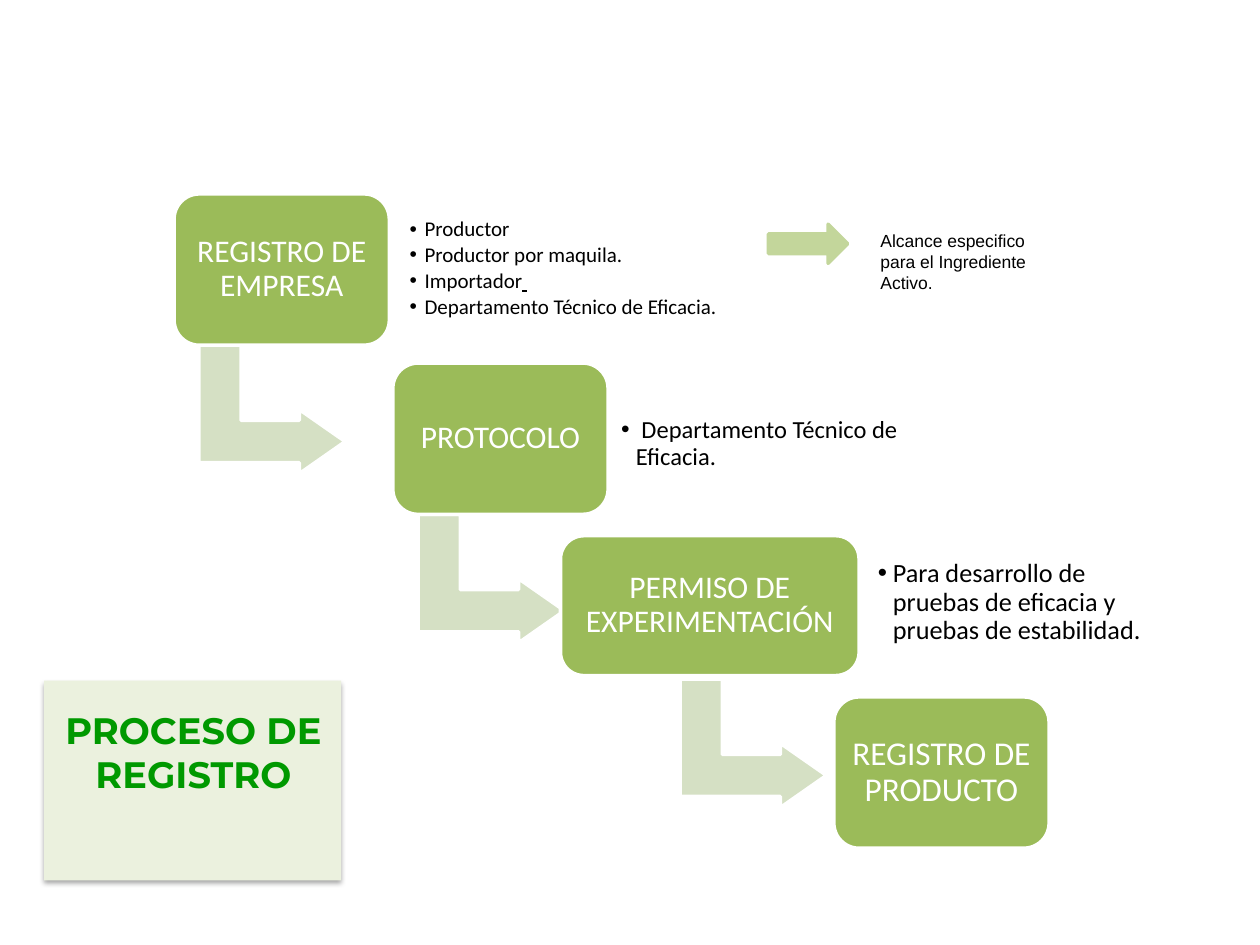
"""Build the slide on the registration process as a staircase of steps."""
import lxml.etree
import pptx
import pptx.dml.color
import pptx.enum.shapes
import pptx.enum.text
import pptx.oxml.ns
import pptx.util

Cm, Pt = pptx.util.Cm, pptx.util.Pt
KIND = pptx.enum.shapes.MSO_SHAPE
MID = pptx.enum.text.MSO_ANCHOR.MIDDLE
CENTER = pptx.enum.text.PP_ALIGN.CENTER

BENDS = [(4.19, 6.78), (8.61, 10.19), (13.89, 13.51)]
STEPS = [
    ("REGISTRO DE EMPRESA", (3.51, 3.91, 4.34, 3.05), 18, 0.18),
    ("PROTOCOLO", (7.92, 7.32, 4.34, 3.05), 18, 0.18),
    ("PERMISO DE EXPERIMENTACIÓN", (11.3, 10.8, 6.02, 2.82), 18, 0.18),
    ("REGISTRO DE PRODUCTO", (16.81, 14.05, 4.34, 3.05), 19, 0.2),
]
LISTS = [
    (["Productor", "Productor por maquila.", "Importador",
      "Departamento Técnico de Eficacia."], (8.13, 3.63, 6.63, 3.58), 12, 0.13),
    ([" Departamento Técnico de Eficacia."], (12.37, 8.36, 6.07, 1.19), 14, 0.15),
    (["Para desarrollo de pruebas de eficacia y pruebas de estabilidad."],
     (17.5, 10.92, 5.84, 2.46), 15, 0.2),
]


def tint(code):
    return pptx.dml.color.RGBColor.from_string(code)


def apply(item, **values):
    for name, value in values.items():
        setattr(item, name, value)


def add_node(parent, tag, **values):
    return lxml.etree.SubElement(parent, pptx.oxml.ns.qn(tag), values)


def place(box):
    return [Cm(side) for side in box]


def add_form(slide, kind, box, fill, edge=None):
    form = slide.shapes.add_shape(kind, *place(box))
    form.shadow.inherit = False
    form.fill.solid()
    form.fill.fore_color.rgb = tint(fill)
    if edge:
        form.line.color.rgb = tint(edge)
        form.line.width = Pt(2)
    else:
        form.line.fill.background()
    return form


def set_frame(frame, inset):
    apply(frame, word_wrap=True, vertical_anchor=MID,
          **{f"margin_{side}": Cm(inset) for side in ("left", "top", "right", "bottom")})


def set_font(line, color, **values):
    line.font.color.rgb = tint(color)
    apply(line.font, **values)


def add_bend(slide, spot):
    bend = add_form(slide, KIND.BENT_UP_ARROW, (*spot, 2.59, 2.95), "D5E0C4", "FFFFFF")
    bend.rotation = 90
    for index, value in enumerate((0.328, 0.25, 0.358)):
        bend.adjustments[index] = value


def add_step(slide, text, box, size, inset):
    step = add_form(slide, KIND.ROUNDED_RECTANGLE, box, "9BBB59", "FFFFFF")
    set_frame(step.text_frame, inset)
    line = step.text_frame.paragraphs[0]
    line.text = text
    apply(line, alignment=CENTER, line_spacing=0.9)
    set_font(line, "FFFFFF", name="Calibri", size=Pt(size))


def add_list(slide, items, box, size, inset):
    frame = slide.shapes.add_textbox(*place(box)).text_frame
    set_frame(frame, inset)
    for index, item in enumerate(items):
        line = frame.add_paragraph() if index else frame.paragraphs[0]
        line.text = item
        props = line._p.get_or_add_pPr()
        apply_indent = {"marL": str(Cm(0.3)), "indent": str(-Cm(0.3))}
        for name, value in apply_indent.items():
            props.set(name, value)
        add_node(props, "a:buFont", typeface="Arial")
        add_node(props, "a:buChar", char="•")
        apply(line, level=1, line_spacing=0.9, space_after=Pt(round(size * 0.15, 1)))
        set_font(line, "000000", name="Calibri", size=Pt(size))
        if item == "Importador":
            blank = line.add_run()
            blank.text = " "
            blank.font.underline = True


def add_label(slide, text, box, color, align=None, **values):
    frame = slide.shapes.add_textbox(*place(box)).text_frame
    frame.word_wrap = True
    line = frame.paragraphs[0]
    apply(line, text=text, alignment=align)
    set_font(line, color, **values)


def add_title(slide):
    card = add_form(slide, KIND.RECTANGLE, (0.89, 13.72, 5.99, 4.03), "EBF1DE")
    effect = card._element.spPr.find(pptx.oxml.ns.qn("a:effectLst"))
    shade = add_node(effect, "a:outerShdw", blurRad=str(Pt(3.1)), dist=str(Pt(1.8)),
                     dir="5400000", rotWithShape="0")
    black = add_node(shade, "a:srgbClr", val="000000")
    add_node(black, "a:alpha", val="35000")
    add_label(slide, "PROCESO DE REGISTRO", (0, 14.15, 7.8, 2.95), "009900", CENTER,
              name="Montserrat", size=Pt(21), bold=True)


def main():
    deck = pptx.Presentation()
    apply(deck, slide_width=Cm(25.4), slide_height=Cm(19.05))
    slide = deck.slides.add_slide(deck.slide_layouts[6])
    add_title(slide)
    for spot in BENDS:
        add_bend(slide, spot)
    for step in STEPS:
        add_step(slide, *step)
    for entry in LISTS:
        add_list(slide, *entry)
    add_label(slide, "Alcance especifico para el Ingrediente Activo.",
              (17.5, 4.52, 4.09, 1.55), "000000", name="Arial", size=Pt(10))
    add_form(slide, KIND.RIGHT_ARROW, (15.49, 4.52, 1.6, 0.79), "C3D69B", "C3D69B")
    deck.save("out.pptx")


if __name__ == "__main__":
    main()
